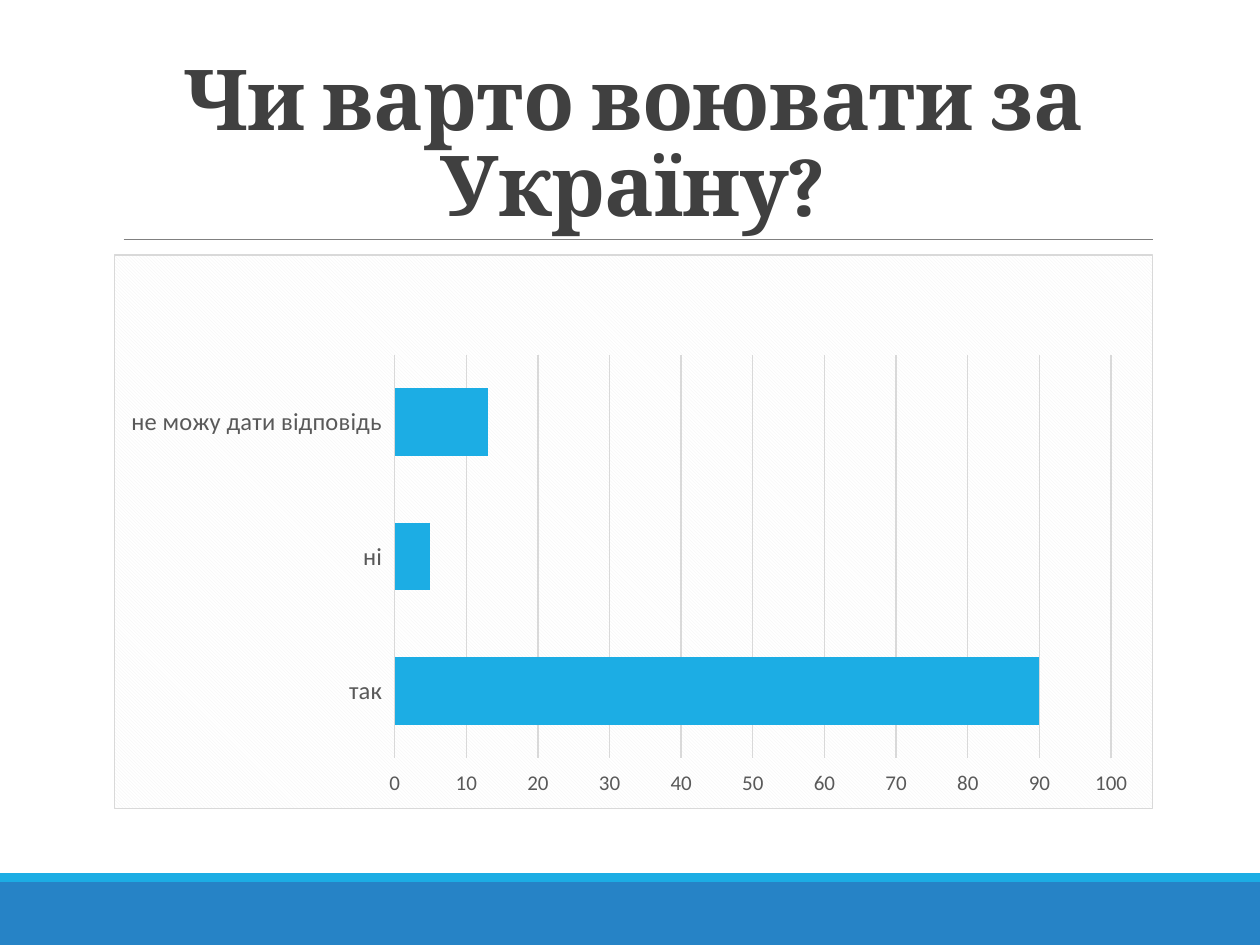
"""Build a survey slide with a title, a bar chart and a two-tone footer."""
from dataclasses import dataclass

from lxml import etree
from pptx import Presentation
from pptx import util as u
from pptx.chart.data import CategoryChartData
from pptx.dml.color import RGBColor
from pptx.enum import chart as ch, shapes, text
from pptx.oxml import parse_xml
from pptx.oxml.ns import nsdecls, qn


@dataclass(frozen=True)
class Theme:
    accent: str = "1CADE4"
    footer: str = "2683C6"
    rule: str = "808080"
    heading: str = "404040"
    label: str = "595959"
    grid: str = "D9D9D9"
    hatch: str = "F2F2F2"
    paper: str = "FFFFFF"
    heading_font: str = "Cambria"
    label_font: str = "Calibri"
    heading_size: float = 48
    category_size: float = 14
    value_size: float = 12
    hairline: float = 0.5
    grid_width: float = 0.75


@dataclass(frozen=True)
class Box:
    left: float
    top: float
    width: float
    height: float

    def lengths(self) -> tuple:
        return tuple(u.Cm(n) for n in (self.left, self.top, self.width, self.height))


@dataclass(frozen=True)
class Band:
    box: Box
    color: str


THEME = Theme()
BANDS = (
    Band(Box(0, 17.78, 25.4, 1.27), THEME.footer),
    Band(Box(0, 17.6, 25.4, 0.18), THEME.accent),
)
HEADING_BOX = Box(2.29, 0.79, 20.96, 4.04)
CHART_BOX = Box(2.29, 5.13, 20.96, 11.18)
PLOT_SHARE = {"x": 0.27, "y": 0.18, "w": 0.69, "h": 0.73}
ANSWERS = {"так": 90, "ні": 5, "не можу дати відповідь": 13}


def rgb(color: str) -> RGBColor:
    return RGBColor.from_string(color)


def draw_band(slide, band: Band) -> None:
    strip = slide.shapes.add_shape(shapes.MSO_SHAPE.RECTANGLE, *band.box.lengths())
    strip.shadow.inherit = False
    strip.fill.solid()
    strip.fill.fore_color.rgb = rgb(band.color)
    strip.line.fill.background()


def draw_rule(slide, left: float, right: float, top: float) -> None:
    rule = slide.shapes.add_connector(
        shapes.MSO_CONNECTOR.STRAIGHT, u.Cm(left), u.Cm(top), u.Cm(right), u.Cm(top))
    rule.line.color.rgb = rgb(THEME.rule)
    rule.line.width = u.Pt(THEME.hairline)
    etree.SubElement(rule._element.spPr, qn("a:effectLst"))


def add_text(slide, words: str, box: Box, *, font: str, size: float, color: str,
             bold: bool = False, line_spacing: float = 1, tracking: float = 0) -> None:
    frame = slide.shapes.add_textbox(*box.lengths()).text_frame
    frame.word_wrap = True
    frame.vertical_anchor = text.MSO_ANCHOR.BOTTOM
    paragraph = frame.paragraphs[0]
    paragraph.alignment = text.PP_ALIGN.CENTER
    paragraph.line_spacing = line_spacing
    run = paragraph.add_run()
    run.text = words
    format_font(run.font, font, size, color)
    run.font.bold = bold
    run.font._element.set("spc", str(round(tracking * 100)))


def format_font(font, name: str, size: float, color: str) -> None:
    font.name = name
    font.size = u.Pt(size)
    font.color.rgb = rgb(color)


def format_axis(axis, size: float) -> None:
    format_font(axis.tick_labels.font, THEME.label_font, size, THEME.label)
    axis.major_tick_mark = ch.XL_TICK_MARK.OUTSIDE
    axis.format.line.fill.background()


def place_plot(chart) -> None:
    plot_area = chart._chartSpace.chart.plotArea
    for layout in plot_area.findall(qn("c:layout")):
        plot_area.remove(layout)
    shares = "".join(f'<c:{key} val="{share}"/>' for key, share in PLOT_SHARE.items())
    plot_area.insert(0, parse_xml(
        f'<c:layout {nsdecls("c")}><c:manualLayout><c:layoutTarget val="inner"/>'
        f'<c:xMode val="edge"/><c:yMode val="edge"/>{shares}'
        '</c:manualLayout></c:layout>'))


def fill_chart_area(chart) -> None:
    chart._chartSpace.chart.addnext(parse_xml(
        f'<c:spPr {nsdecls("c", "a")}><a:pattFill prst="dkDnDiag">'
        f'<a:fgClr><a:srgbClr val="{THEME.hatch}"/></a:fgClr>'
        f'<a:bgClr><a:srgbClr val="{THEME.paper}"/></a:bgClr></a:pattFill>'
        f'<a:ln w="{u.Pt(THEME.grid_width)}"><a:solidFill>'
        f'<a:srgbClr val="{THEME.grid}"/></a:solidFill></a:ln></c:spPr>'))


def draw_chart(slide, answers: dict[str, int], box: Box) -> None:
    survey = CategoryChartData()
    survey.categories = list(answers)
    survey.add_series("", list(answers.values()))
    chart = slide.shapes.add_chart(
        ch.XL_CHART_TYPE.BAR_CLUSTERED, *box.lengths(), survey).chart
    chart.has_title = False
    chart.has_legend = False
    format_font(chart.font, THEME.label_font, THEME.value_size, THEME.label)
    format_axis(chart.category_axis, THEME.category_size)
    scale = chart.value_axis
    format_axis(scale, THEME.value_size)
    scale.minimum_scale, scale.maximum_scale, scale.major_unit = 0, 100, 10
    scale.has_major_gridlines = True
    scale.major_gridlines.format.line.color.rgb = rgb(THEME.grid)
    scale.major_gridlines.format.line.width = u.Pt(THEME.grid_width)
    bars = chart.plots[0]
    bars.gap_width = 100
    bars.vary_by_categories = False
    bars.series[0].format.fill.solid()
    bars.series[0].format.fill.fore_color.rgb = rgb(THEME.accent)
    place_plot(chart)
    fill_chart_area(chart)


def main() -> None:
    deck = Presentation()
    deck.slide_width, deck.slide_height = u.Cm(25.4), u.Cm(19.05)
    slide = deck.slides.add_slide(deck.slide_layouts[6])
    for band in BANDS:
        draw_band(slide, band)
    draw_rule(slide, left=2.49, right=23.24, top=4.83)
    add_text(slide, "Чи варто воювати за Україну?", HEADING_BOX,
             font=THEME.heading_font, size=THEME.heading_size, color=THEME.heading,
             bold=True, line_spacing=0.85, tracking=-0.5)
    draw_chart(slide, ANSWERS, CHART_BOX)
    deck.save("out.pptx")


if __name__ == "__main__":
    main()
